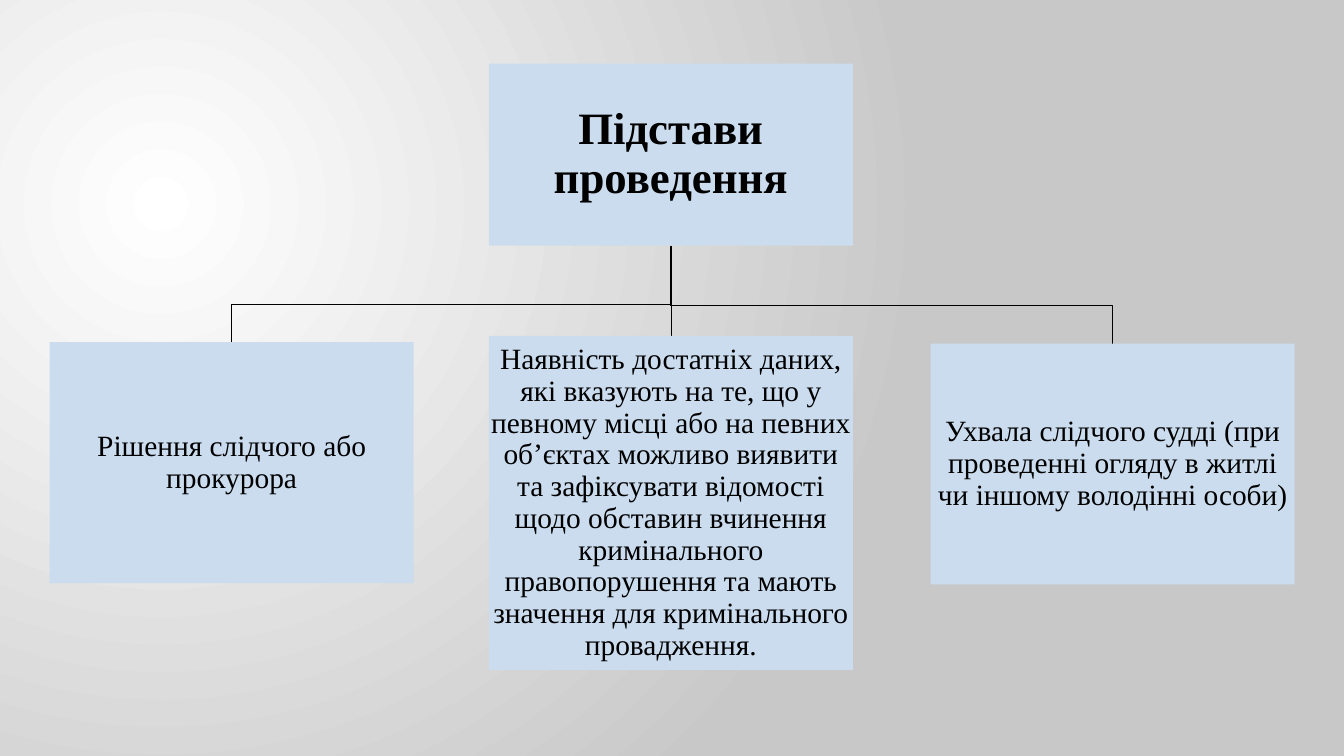
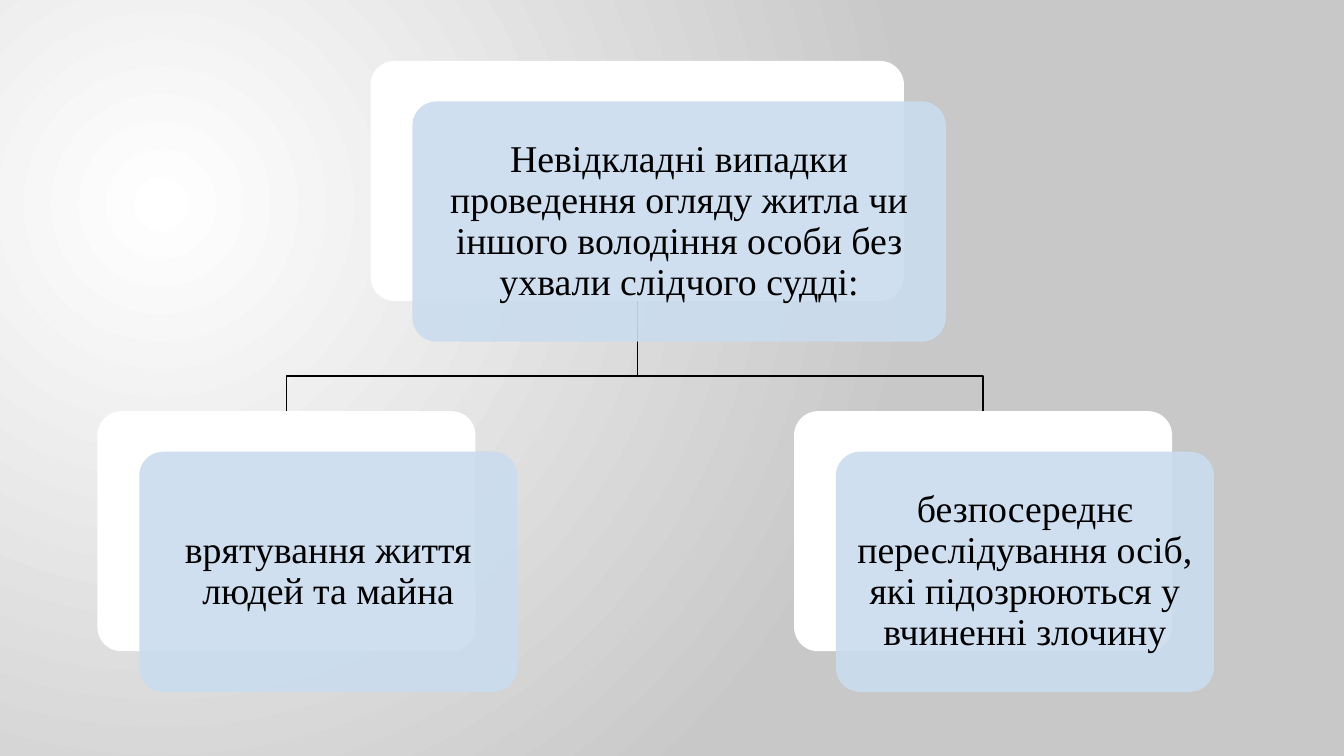
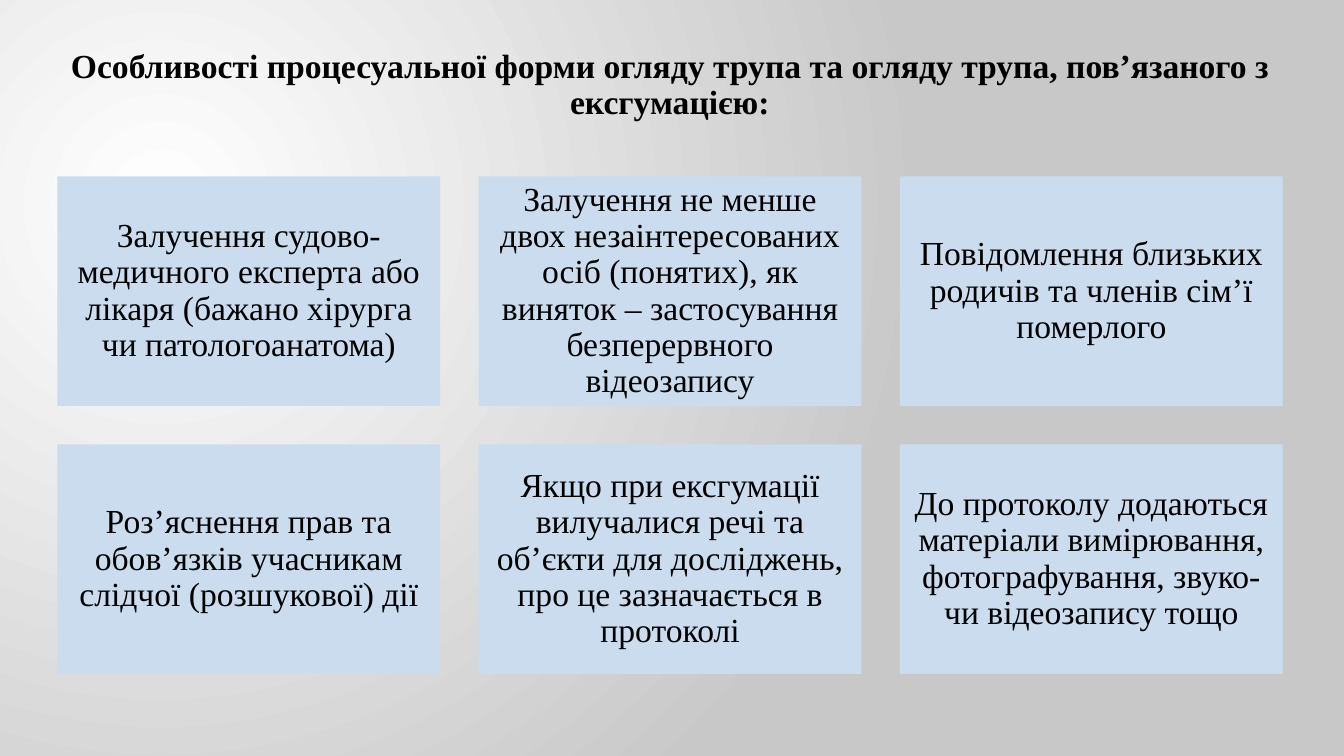
from lxml.etree import SubElement
from pptx import Presentation
from pptx.dml.color import RGBColor
from pptx.enum.shapes import MSO_CONNECTOR, MSO_SHAPE
from pptx.enum.text import MSO_ANCHOR, MSO_AUTO_SIZE, PP_ALIGN
from pptx.oxml.ns import qn
from pptx.util import Pt

FONT = "Times New Roman"
INK, PALE, WHITE, GREY = "000000", "CADCEE", "FFFFFF", "C8C8C8"


def paint(color, tone):
    color.rgb = RGBColor.from_string(tone)


def backdrop(master):
    """Give all slides a round gradient centred at the upper left."""
    fill = master.background.fill
    fill.gradient()
    for stop, tone in zip(fill.gradient_stops, (WHITE, GREY)):
        paint(stop.color, tone)
    grad = master.element.find(".//" + qn("a:gradFill"))
    grad.remove(grad.find(qn("a:lin")))
    ring = SubElement(grad, qn("a:path"), {"path": "circle"})
    SubElement(ring, qn("a:fillToRect"),
               {"l": "50000", "t": "55000", "r": "125000", "b": "100000"})


def write(shape, text, size=24, bold=False, pad=7.2, anchor=MSO_ANCHOR.MIDDLE):
    frame = shape.text_frame
    frame.word_wrap = True
    frame.auto_size = MSO_AUTO_SIZE.NONE
    frame.vertical_anchor = anchor
    frame.margin_left = frame.margin_right = Pt(pad)
    frame.margin_top = frame.margin_bottom = Pt(min(pad, 8))
    para = frame.paragraphs[0]
    para.alignment = PP_ALIGN.CENTER
    para.line_spacing = 0.9
    run = para.add_run()
    run.text = text
    run.font.name, run.font.size, run.font.bold = FONT, Pt(size), bold
    paint(run.font.color, INK)


def box(slide, left, top, width, height, tone=PALE, kind=MSO_SHAPE.RECTANGLE):
    shape = slide.shapes.add_shape(
        kind, Pt(left), Pt(top), Pt(width), Pt(height))
    shape.shadow.inherit = False
    shape.fill.solid()
    paint(shape.fill.fore_color, tone)
    shape.line.fill.background()
    return shape


def card(slide, text, left, top, width, height):
    """Draw a white round box with a sheer blue one shifted over it."""
    for shift, tone in ((0, WHITE), (29, PALE)):
        shape = box(slide, left + shift * 1.03, top + shift, width, height,
                    tone, MSO_SHAPE.ROUNDED_RECTANGLE)
        shape.adjustments[0] = 0.1
    color = shape.fill._xPr.find(".//" + qn("a:srgbClr"))
    SubElement(color, qn("a:alpha"), {"val": "90000"})
    write(shape, text, size=27, pad=8)


def stroke(line, weight):
    line.width = Pt(weight)
    paint(line.color, INK)


def elbow(slide, start, end, rise, weight):
    """Bend a line from start down to end, level at rise above end."""
    (left, top), (right, foot) = start, end
    knee = foot - rise
    pen = slide.shapes.build_freeform(Pt(left), Pt(top))
    pen.add_line_segments(
        [(Pt(x), Pt(y)) for x, y in ((left, knee), (right, knee), end)],
        close=False)
    shape = pen.convert_to_shape()
    shape.shadow.inherit = False
    shape.fill.background()
    stroke(shape.line, weight)


def stem(slide, x, top, foot, weight):
    line = slide.shapes.add_connector(
        MSO_CONNECTOR.STRAIGHT, Pt(x), Pt(top), Pt(x), Pt(foot))
    SubElement(line._element.spPr, qn("a:effectLst"))
    stroke(line.line, weight)
    effect = line._element.spPr.find(qn("a:effectLst"))
    line._element.spPr.append(effect)


def grounds(slide):
    width, left, top, height = 260, 349.2, 45.5, 130
    mid, foot = left + width / 2, top + height
    items = (
        (35.5, 244.5, 172, "Рішення слідчого або прокурора"),
        (left, 240, 238.5, "Наявність достатніх даних, які вказують на те, "
         "що у певному місці або на певних об’єктах можливо виявити та "
         "зафіксувати відомості щодо обставин вчинення кримінального "
         "правопорушення та мають значення для кримінального провадження."),
        (664.8, 245.5, 172, "Ухвала слідчого судді (при проведенні огляду "
         "в житлі чи іншому володінні особи)"),
    )
    for x, y, _, _ in items:
        if x == left:
            stem(slide, mid, foot, y, 0.5)
        else:
            elbow(slide, (mid, foot), (x + width / 2, y), 27.3, 0.5)
    write(box(slide, left, top, width, height), "Підстави проведення",
          size=32, bold=True, pad=1.5)
    for x, y, tall, text in items:
        write(box(slide, x, y, width, tall), text, size=21, pad=0.7)


def urgent(slide):
    left, top, width, height = 264.7, 43.5, 381, 171.5
    row, span = 293.7, 270
    items = ((69.6, "врятування життя людей та майна"),
             (567.2, "безпосереднє переслідування осіб, які підозрюються "
              "у вчиненні злочину"))
    for x, _ in items:
        elbow(slide, (left + width / 2, top + height),
              (x + span / 2, row), 25.2, 1)
    card(slide, "Невідкладні випадки проведення огляду житла чи іншого "
         "володіння особи без ухвали слідчого судді:",
         left, top, width, height)
    for x, text in items:
        card(slide, text, x, row, span, height)


def features(slide):
    title = slide.shapes.title
    title.left, title.top = Pt(41), Pt(30)
    title.width, title.height = Pt(875), Pt(64)
    write(title, "Особливості процесуальної форми огляду трупа та огляду "
          "трупа, пов’язаного з ексгумацією:", bold=True, pad=5,
          anchor=MSO_ANCHOR.TOP)
    width, height, gap = 273.5, 164, 27.4
    items = (
        "Залучення судово-медичного експерта або лікаря (бажано хірурга "
        "чи патологоанатома)",
        "Залучення не менше двох незаінтересованих осіб (понятих), як "
        "виняток – застосування безперервного відеозапису",
        "Повідомлення близьких родичів та членів сім’ї померлого",
        "Роз’яснення прав та обов’язків учасникам слідчої (розшукової) дії",
        "Якщо при ексгумації вилучалися речі та об’єкти для досліджень, "
        "про це зазначається в протоколі",
        "До протоколу додаються матеріали вимірювання, фотографування, "
        "звуко- чи відеозапису тощо",
    )
    for spot, text in enumerate(items):
        row, col = divmod(spot, 3)
        write(box(slide, 41 + col * (width + gap), 126 + row * (height + gap),
                  width, height), text)


def main():
    deck = Presentation()
    deck.slide_width, deck.slide_height = Pt(960), Pt(540)
    backdrop(deck.slide_master)
    bare, titled = deck.slide_layouts[6], deck.slide_layouts[5]
    for layout, draw in ((bare, grounds), (bare, urgent), (titled, features)):
        draw(deck.slides.add_slide(layout))
    deck.save("out.pptx")


if __name__ == "__main__":
    main()
